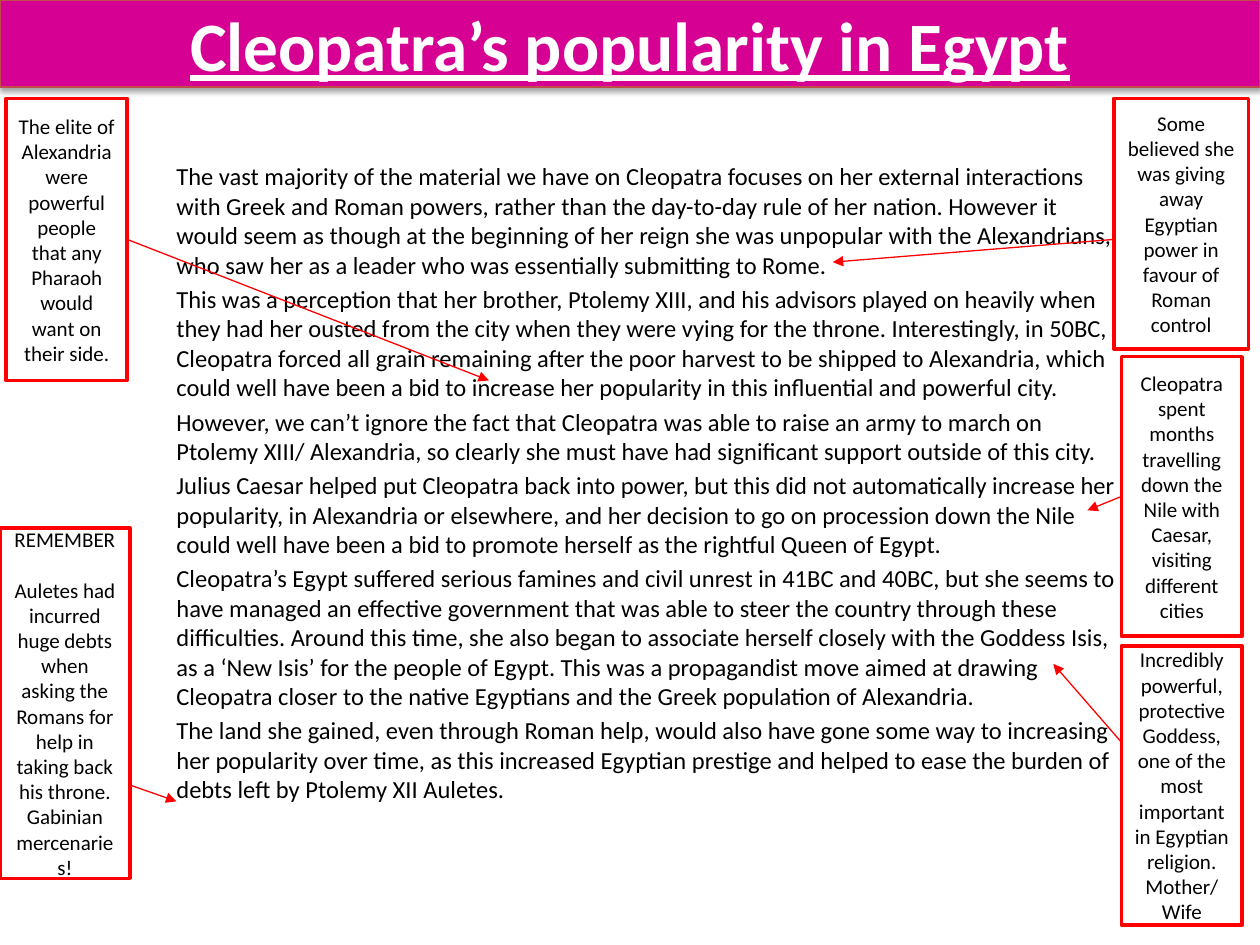
from dataclasses import dataclass

from lxml import etree
from pptx import Presentation
from pptx.dml.color import RGBColor
from pptx.enum.shapes import MSO_CONNECTOR, MSO_SHAPE
from pptx.enum.text import MSO_ANCHOR, MSO_AUTO_SIZE, PP_ALIGN
from pptx.oxml.ns import qn
from pptx.util import Pt

RECTANGLE = MSO_SHAPE.RECTANGLE
STRAIGHT = MSO_CONNECTOR.STRAIGHT
MIDDLE, TOP = MSO_ANCHOR.MIDDLE, MSO_ANCHOR.TOP
CENTER, LEFT = PP_ALIGN.CENTER, PP_ALIGN.LEFT
NO_AUTOFIT = MSO_AUTO_SIZE.NONE


@dataclass(frozen=True)
class Theme:
    font: str = "Calibri"
    banner: str = "D60093"
    banner_line: str = "BF4C48"
    accent: str = "FF0000"
    ink: str = "000000"
    paper: str = "FFFFFF"
    title_size: float = 39.6
    body_size: float = 14
    note_size: float = 12
    thin: float = 0.75
    thick: float = 2


THEME = Theme()

TITLE = "Cleopatra’s popularity in Egypt"

# Each paragraph is a list of (text, is key phrase).
ESSAY = [
    [("The vast majority of the material we have on Cleopatra focuses on her external "
      "interactions with Greek and Roman powers, rather than the day-to-day rule of her "
      "nation. However it would seem as though at the beginning of her reign she was "
      "unpopular with the Alexandrians, who saw her as a leader who was ", False),
     ("essentially submitting to Rome", True), (".", False)],
    [("This was a perception that her brother, Ptolemy XIII, and his advisors played on "
      "heavily when they had her ousted from the city when they were vying for the throne. "
      "Interestingly, in 50BC, Cleopatra forced all grain remaining after the poor harvest "
      "to be shipped to Alexandria, which could well have been a bid to", False),
     (" increase her popularity in this influential and powerful city", True), (".", False)],
    [("However, we can’t ignore the fact that Cleopatra was able to raise an army to march "
      "on Ptolemy XIII/ Alexandria, so clearly she must have had significant support "
      "outside of this city.", False)],
    [("Julius Caesar helped put Cleopatra back into power, but this did not automatically "
      "increase her popularity, in Alexandria or elsewhere, and her decision to go on ", False),
     ("procession down the Nile ", True),
     ("could well have been a bid to promote herself as the rightful Queen of Egypt.", False)],
    [("Cleopatra’s Egypt suffered serious famines and civil unrest in 41BC and 40BC, but "
      "she seems to have managed an effective government that was able to steer the country "
      "through these difficulties. Around this time, she also began to associate herself "
      "closely with the ", False),
     ("Goddess Isis", True),
     (", as a ‘New Isis’ for the people of Egypt. This was a propagandist move aimed at "
      "drawing Cleopatra closer to the native Egyptians and the Greek population of "
      "Alexandria.", False)],
    [("The land she gained, even through Roman help, would also have gone some way to "
      "increasing her popularity over time, as this increased Egyptian prestige and helped "
      "to ease ", False),
     ("the burden of debts left by Ptolemy XII Auletes.", True)],
]

# Box (left, top, width, height), paragraphs, gap between them, arrow start and tip.
NOTES = [
    ((636.5, 56.2, 77, 143.3),
     ["Some believed she was giving away Egyptian power in favour of Roman control"],
     0, (636.5, 136.8), (475.9, 149.8)),
    ((3.6, 56.2, 69.1, 161.3),
     ["The elite of Alexandria were powerful people that any Pharaoh would want on their side."],
     0, (72.7, 136.8), (279.4, 217.4)),
    ((640.8, 203.8, 69.1, 159.8),
     ["Cleopatra spent months travelling down the Nile with Caesar, visiting different cities"],
     0, (640.8, 283.7), (621.4, 291.6)),
    ((640.8, 369.2, 69.1, 159.3),
     ["Incredibly powerful, protective Goddess, one of the most important in Egyptian religion.",
      "Mother/Wife"],
     0, (640.8, 424.1), (601.9, 379.4)),
    ((0, 301.7, 74.2, 200.2),
     ["REMEMBER",
      "Auletes had incurred huge debts when asking the Romans for help in taking back his "
      "throne. Gabinian mercenaries!"],
     14.4, (74.2, 448.6), (100.8, 457.9)),
]


def color(value):
    return RGBColor.from_string(value)


def place(shape, left, top, width, height):
    for side, points in dict(left=left, top=top, width=width, height=height).items():
        setattr(shape, side, Pt(points))


def paint(shape, fill, line, weight):
    shape.fill.solid()
    shape.fill.fore_color.rgb = color(fill)
    shape.line.color.rgb = color(line)
    shape.line.width = Pt(weight)


def set_frame(frame, anchor):
    settings = dict(word_wrap=True, auto_size=NO_AUTOFIT, vertical_anchor=anchor)
    for name, value in settings.items():
        setattr(frame, name, value)


def add_run(paragraph, text, size, ink=THEME.ink, **extra):
    run = paragraph.add_run()
    run.text = text
    for name, value in dict(name=THEME.font, size=Pt(size), **extra).items():
        setattr(run.font, name, value)
    run.font.color.rgb = color(ink)
    return run


def paragraphs_for(frame, items):
    """Yield a paragraph of the frame with each item, using the first one already there."""
    for index, item in enumerate(items):
        yield (frame.add_paragraph() if index else frame.paragraphs[0]), item


def solid_fill(parent, value):
    fill = etree.SubElement(parent, qn("a:solidFill"))
    return etree.SubElement(fill, qn("a:srgbClr"), val=value)


def outline_text(run):
    properties = run.font._element
    line = etree.Element(qn("a:ln"), w=str(Pt(THEME.thin)))
    solid_fill(line, THEME.accent)
    properties.insert(0, line)


def cast_shadow(shape):
    effects = etree.SubElement(shape._element.spPr, qn("a:effectLst"))
    shadow = etree.SubElement(effects, qn("a:outerShdw"), blurRad=str(Pt(3.1)),
                              dist=str(Pt(1.8)), dir="5400000", rotWithShape="0")
    tint = etree.SubElement(shadow, qn("a:srgbClr"), val=THEME.ink)
    etree.SubElement(tint, qn("a:alpha"), val="35000")


def fill_title(banner):
    place(banner, 0, 0, 720, 49.7)
    paint(banner, THEME.banner, THEME.banner_line, THEME.thin)
    cast_shadow(banner)
    set_frame(banner.text_frame, MIDDLE)
    heading = banner.text_frame.paragraphs[0]
    heading.alignment = CENTER
    add_run(heading, TITLE, THEME.title_size, THEME.paper, bold=True, underline=True)


def fill_essay(body):
    place(body, 93.6, 88.6, 553, 390.2)
    set_frame(body.text_frame, TOP)
    for paragraph, phrases in paragraphs_for(body.text_frame, ESSAY):
        paragraph.alignment = LEFT
        properties = paragraph._p.get_or_add_pPr()
        properties.set("marL", "0")
        properties.set("indent", "0")
        etree.SubElement(properties, qn("a:buNone"))
        for text, is_key in phrases:
            run = add_run(paragraph, text, THEME.body_size)
            if is_key:
                outline_text(run)


def add_note(slide, box, lines, gap):
    note = slide.shapes.add_shape(RECTANGLE, *map(Pt, box))
    note.shadow.inherit = False
    paint(note, THEME.paper, THEME.accent, THEME.thick)
    set_frame(note.text_frame, MIDDLE)
    for paragraph, line in paragraphs_for(note.text_frame, lines):
        paragraph.alignment = CENTER
        if line != lines[0]:
            paragraph.space_before = Pt(gap)
        add_run(paragraph, line, THEME.note_size)


def add_arrow(slide, start, tip):
    arrow = slide.shapes.add_connector(STRAIGHT, *map(Pt, start + tip))
    arrow.line.color.rgb = color(THEME.accent)
    arrow.line.width = Pt(THEME.thin)
    etree.SubElement(arrow.line._get_or_add_ln(), qn("a:tailEnd"), type="triangle")
    etree.SubElement(arrow._element.spPr, qn("a:effectLst"))


def main():
    deck = Presentation()
    deck.slide_width, deck.slide_height = Pt(720), Pt(540)
    slide = deck.slides.add_slide(deck.slide_layouts[1])
    fill_title(slide.shapes.title)
    fill_essay(slide.placeholders[1])
    for box, lines, gap, _, _ in NOTES:
        add_note(slide, box, lines, gap)
    for *_, start, tip in NOTES:
        add_arrow(slide, start, tip)
    deck.save("out.pptx")


if __name__ == "__main__":
    main()
